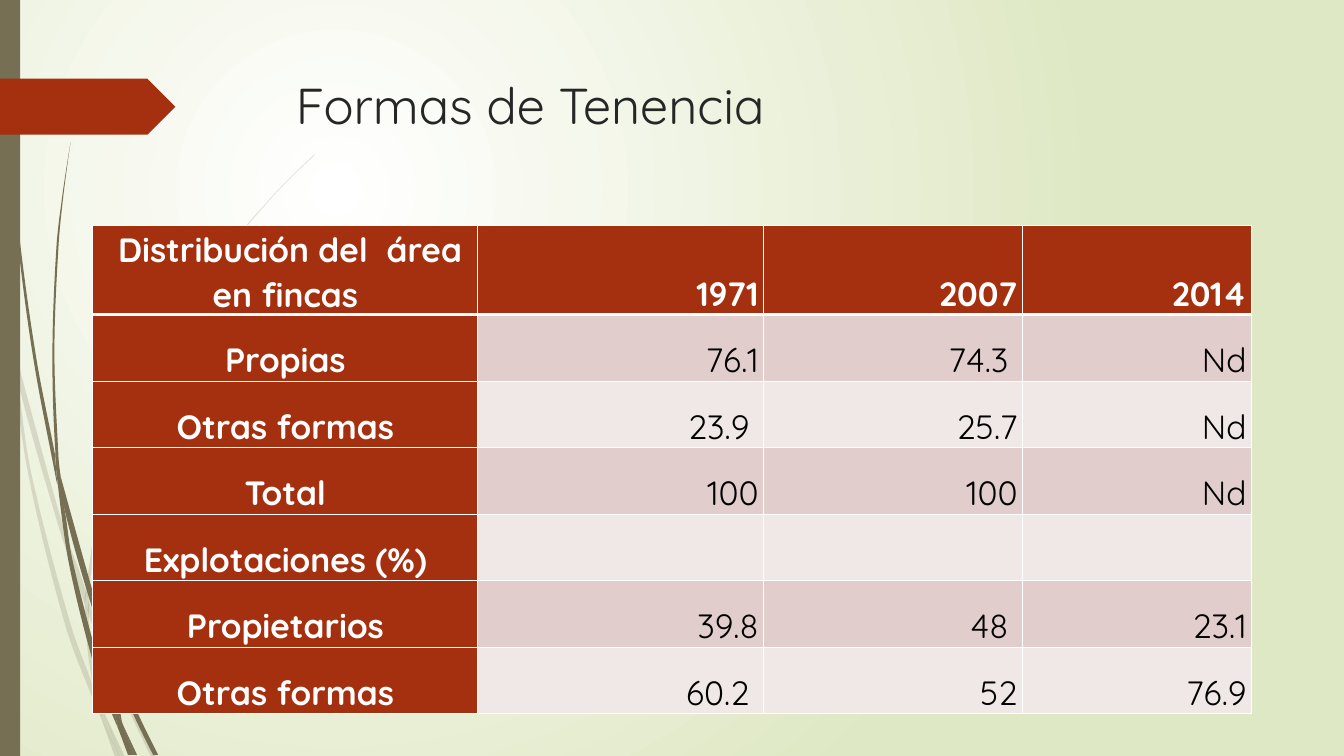
from math import hypot
from lxml import etree
from pptx import Presentation
from pptx import util as u
from pptx.dml.color import RGBColor
from pptx.enum import shapes, text
from pptx.oxml import ns

COLORS = {
    "white": "FFFFFF", "meadow": "DFE8C4", "stem": "766F54", "rust": "A53010",
    "title": "262626", "black": "000000", "band_dark": "E1CDCC", "band_light": "F0E8E7",
}
FONT = "Quicksand"
GRASS_UNIT = u.Pt(0.72)
FINENESS = 10
PALE_GRASS = [
    [(11, 350), (9, 322), (0, 282), (0, 299), (10, 344)],
    [(58, 522), (84, 599), (85, 586), (62, 520), (14, 345), (17, 376)],
    [(92, 607), (88, 596), (88, 610), (123, 694), (150, 751), (155, 751), (127, 692)],
    [(119, 751), (124, 751), (105, 711)],
    [(93, 683), (70, 619), (31, 469), (17, 376), (11, 350), (28, 470), (65, 621), (92, 693),
     (101, 714), (99, 707)],
    [(84, 599), (87, 646), (93, 683), (96, 692), (105, 711), (103, 706), (91, 646), (88, 610),
     (88, 608)],
    [(88, 584), (110, 462), (160, 349), (229, 245), (268, 198), (290, 175), (312, 154),
     (312, 153), (289, 175), (268, 197), (228, 244), (158, 348), (107, 461), (85, 584),
     (85, 586), (88, 596)],
    [(101, 714), (114, 751), (119, 751)],
    [(88, 608), (88, 610), (88, 596), (85, 586), (84, 599)],
    [(96, 692), (93, 683), (99, 707), (101, 714), (119, 751), (105, 711)],
]
DARK_GRASS = [
    [(7, 110), (17, 233), (33, 355), (56, 477), (57, 481), (55, 457), (55, 453), (36, 355),
     (19, 232), (8, 109), (5, 48), (4, 0), (3, 0), (4, 48)],
    [(88, 592), (106, 645), (106, 633), (106, 631), (93, 590), (60, 472), (64, 505)],
    [(113, 649), (110, 641), (111, 656), (132, 708), (152, 749), (157, 749), (136, 706)],
    [(110, 691), (98, 657), (72, 556), (64, 505), (57, 477), (68, 557), (93, 659), (111, 708),
     (117, 722), (116, 717)],
    [(60, 472), (58, 453), (54, 349), (58, 245), (63, 193), (70, 141), (62, 193), (56, 245),
     (52, 349), (55, 449)],
    [(133, 749), (136, 749), (122, 719)],
    [(57, 477), (64, 505), (60, 472), (55, 449), (55, 453)],
    [(111, 633), (125, 552), (158, 476), (205, 406), (231, 374), (245, 359), (261, 344),
     (260, 344), (245, 358), (231, 373), (204, 405), (156, 474), (122, 551), (106, 631),
     (110, 641)],
    [(117, 722), (127, 749), (131, 749)],
    [(106, 645), (110, 691), (116, 706), (122, 719), (121, 716), (111, 656), (109, 651)],
    [(106, 645), (109, 651), (111, 656), (110, 641), (106, 631), (106, 633)],
    [(116, 706), (110, 691), (116, 717), (117, 722), (130, 749), (133, 749), (122, 719)],
]
TENURE_ROWS = [
    (" Distribución del  área en fincas", "1971", "2007", "2014"),
    ("Propias", "76.1", "74.3 ", "Nd"),
    ("Otras formas", "23.9 ", "25.7", "Nd"),
    ("Total", "100", "100", "Nd"),
    ("Explotaciones (%)", "", "", ""),
    ("Propietarios", "39.8", "48 ", "23.1"),
    ("Otras formas", "60.2 ", "52", "76.9"),
]
COLUMN_WIDTHS = (275, 204, 185, 163.5)
HEADER_HEIGHT = 63.5


def rgb(name):
    return RGBColor.from_string(COLORS[name])


def add_xml(parent, tag, **attributes):
    return etree.SubElement(parent, ns.qn(tag), attributes)


def paint(shape, color):
    shape.shadow.inherit = False
    shape.fill.solid()
    shape.fill.fore_color.rgb = rgb(color)
    shape.line.fill.background()


def style_runs(paragraph, size, color, bold=False):
    for run in paragraph.runs:
        run.font.name = FONT
        run.font.size = u.Pt(size)
        run.font.bold = bold
        run.font.color.rgb = rgb(color)


def tangent(before, knot, after):
    arriving = (knot[0] - before[0], knot[1] - before[1])
    leaving = (after[0] - knot[0], after[1] - knot[1])
    lengths = hypot(*arriving) * hypot(*leaving)
    if arriving[0] * leaving[0] + arriving[1] * leaving[1] < 0.6 * lengths:
        return 0, 0
    dx, dy = after[0] - before[0], after[1] - before[1]
    return dx / hypot(dx, dy), dy / hypot(dx, dy)


def round_edges(blade):
    edges = list(blade._element.iter(ns.qn("a:lnTo")))
    ends = [(int(edge[0].get("x")), int(edge[0].get("y"))) for edge in edges]
    tangents = [tangent(ends[i - 1], knot, ends[(i + 1) % len(ends)])
                for i, knot in enumerate(ends)]
    for i, edge in enumerate(edges):
        start, end = ends[i - 1], ends[i]
        reach = hypot(end[0] - start[0], end[1] - start[1]) / 3
        controls = [
            [a + reach * t for a, t in zip(start, tangents[i - 1])],
            [a - reach * t for a, t in zip(end, tangents[i])],
            end,
        ]
        curve = etree.Element(ns.qn("a:cubicBezTo"))
        for x, y in controls:
            add_xml(curve, "a:pt", x=str(round(x)), y=str(round(y)))
        edge.getparent().replace(edge, curve)


def draw_blade(slide, knots, opacity=None):
    outline = [(x * FINENESS, y * FINENESS) for x, y in knots]
    builder = slide.shapes.build_freeform(*outline[0], scale=GRASS_UNIT / FINENESS)
    builder.add_line_segments(outline[1:] + outline[:1], close=True)
    blade = builder.convert_to_shape()
    round_edges(blade)
    paint(blade, "stem")
    if opacity:
        fill_color = blade.fill._xPr.find(".//" + ns.qn("a:srgbClr"))
        add_xml(fill_color, "a:alpha", val=str(opacity * 1000))


def draw_background(slide):
    fill = slide.background.fill
    fill.gradient()
    for stop, color in zip(fill.gradient_stops, ("white", "meadow")):
        stop.color.rgb = rgb(color)
    linear = slide.background._cSld.find(".//" + ns.qn("a:lin"))
    gradient = linear.getparent()
    gradient.remove(linear)
    circle = add_xml(gradient, "a:path", path="circle")
    add_xml(circle, "a:fillToRect", l="50000", t="50000", r="100000", b="100000")


def draw_margin(slide, left, top, width, height):
    for knots in PALE_GRASS:
        draw_blade(slide, knots, opacity=20)
    for knots in DARK_GRASS:
        draw_blade(slide, knots)
    strip = slide.shapes.add_shape(
        shapes.MSO_SHAPE.RECTANGLE, u.Pt(left), u.Pt(top), u.Pt(width), u.Pt(height))
    paint(strip, "stem")
    marker = slide.shapes.add_shape(
        shapes.MSO_SHAPE.PENTAGON, u.Pt(left), u.Pt(top + 56.2), u.Pt(125.3), u.Pt(40))
    paint(marker, "rust")


def draw_title(slide, left, top, width, height):
    title = slide.shapes.add_textbox(u.Pt(left), u.Pt(top), u.Pt(width), u.Pt(height))
    title.text_frame.word_wrap = True
    title.text_frame.text = "Formas de Tenencia"
    style_runs(title.text_frame.paragraphs[0], 36, "title")


def add_borders(cell, row):
    weights = {"L": 1, "R": 1, "T": 3 if row == 1 else 1, "B": 3 if row == 0 else 1}
    properties = cell._tc.get_or_add_tcPr()
    for side, weight in weights.items():
        border = add_xml(properties, "a:ln" + side, w=str(u.Pt(weight)))
        add_xml(add_xml(border, "a:solidFill"), "a:srgbClr", val=COLORS["white"])


def fill_cell(cell, value, row, column):
    heading = row == 0 or column == 0
    add_borders(cell, row)
    cell.fill.solid()
    band = "band_dark" if row % 2 else "band_light"
    cell.fill.fore_color.rgb = rgb("rust" if heading else band)
    cell.vertical_anchor = text.MSO_ANCHOR.BOTTOM
    cell.margin_left = cell.margin_right = u.Pt(3.6)
    cell.margin_top = cell.margin_bottom = u.Pt(0)
    cell.text_frame.text = value
    paragraph = cell.text_frame.paragraphs[0]
    paragraph.alignment = text.PP_ALIGN.RIGHT if column else text.PP_ALIGN.CENTER
    paragraph.line_spacing = 1.07
    style_runs(paragraph, 24, "white" if heading else "black", heading)


def draw_tenure_table(slide, left, top, width, height):
    tenure = slide.shapes.add_table(
        len(TENURE_ROWS), len(COLUMN_WIDTHS),
        u.Pt(left), u.Pt(top), u.Pt(width), u.Pt(height)).table
    tenure.horz_banding = False
    for column, share in zip(tenure.columns, COLUMN_WIDTHS):
        column.width = u.Pt(width * share / sum(COLUMN_WIDTHS))
    body_height = (height - HEADER_HEIGHT) / (len(TENURE_ROWS) - 1)
    for row, values in enumerate(TENURE_ROWS):
        tenure.rows[row].height = u.Pt(body_height if row else HEADER_HEIGHT)
        for column, value in enumerate(values):
            fill_cell(tenure.cell(row, column), value, row, column)


def main():
    deck = Presentation()
    deck.slide_width, deck.slide_height = u.Pt(960), u.Pt(540)
    slide = deck.slides.add_slide(deck.slide_layouts[6])
    draw_background(slide)
    draw_margin(slide, 0, 0, 14.4, 540)
    draw_title(slide, 204.2, 49.3, 702, 101)
    draw_tenure_table(slide, 66.3, 161.2, 827.7, 348.7)
    deck.save("out.pptx")


if __name__ == "__main__":
    main()
